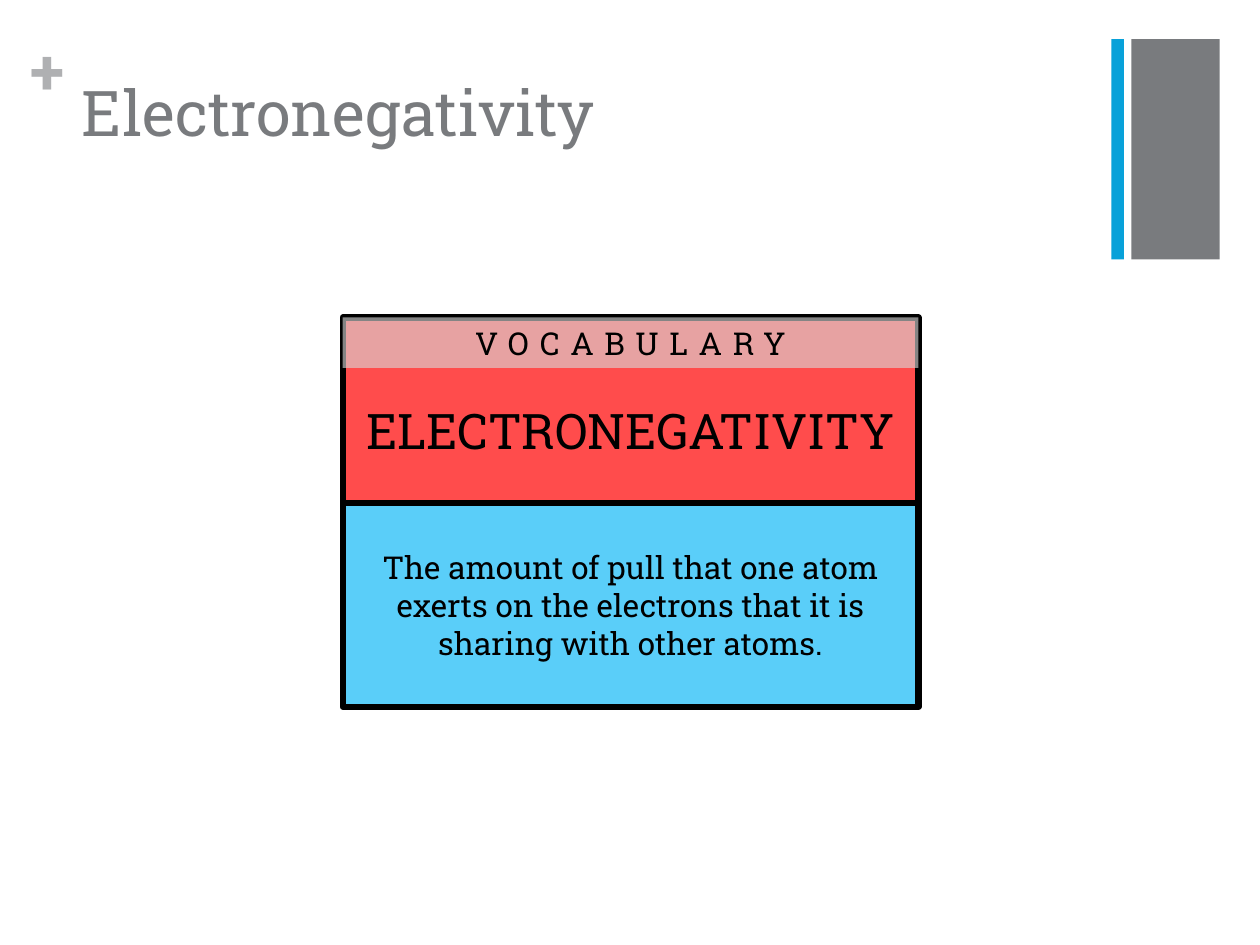
"""Build a vocabulary slide that defines electronegativity."""
from dataclasses import dataclass
from typing import Optional

from lxml.etree import SubElement
from pptx import Presentation
from pptx.dml.color import RGBColor
from pptx.enum.shapes import MSO_SHAPE
from pptx.enum.text import MSO_ANCHOR, PP_ALIGN
from pptx.oxml.ns import qn
from pptx.util import Inches, Pt

COLS, ROWS = 100, 75
FONT = "Roboto Slab"
GREY, BLACK = "797B7E", "000000"
CARD_LEFT, CARD_WIDTH = 27.2, 45.7
TOP_ROW, SPLIT_ROW = 25.2, 39.9
BAR_TOP, BAR_HEIGHT = 3.1, 17.5


@dataclass
class Box:
    left: float
    top: float
    width: float
    height: float
    fill: str
    opacity: int = 100
    outlined: bool = False
    text: str = ""
    size: int = 18
    spacing: int = 0
    inset_top: float = 0.5


BOXES = [
    Box(89.8, BAR_TOP, 7, BAR_HEIGHT, GREY),
    Box(88.2, BAR_TOP, 1, BAR_HEIGHT, "08A1D9"),
    Box(CARD_LEFT, TOP_ROW, CARD_WIDTH, SPLIT_ROW - TOP_ROW, "FF0000", 70, True,
        "ELECTRONEGATIVITY", 28, inset_top=3.7),
    Box(CARD_LEFT, TOP_ROW, CARD_WIDTH, 4, "D9D9D9", 61, text="VOCABULARY", spacing=6),
    Box(CARD_LEFT, SPLIT_ROW, CARD_WIDTH, 16.2, "5ACEF9", outlined=True,
        text="The amount of pull that one atom exerts on the electrons "
             "that it is sharing with other atoms."),
]

prs = Presentation()
prs.slide_width, prs.slide_height = Inches(10), Inches(7.5)


def col(n: float) -> int:
    return round(prs.slide_width * n / COLS)


def row(n: float) -> int:
    return round(prs.slide_height * n / ROWS)


def rgb(value: str) -> RGBColor:
    return RGBColor.from_string(value)


def style_text(tf, text: str, size: int, color: str, align=PP_ALIGN.LEFT,
               bold: bool = False, spacing: int = 0) -> None:
    tf.text = text
    p = tf.paragraphs[0]
    p.alignment = align
    r = p.runs[0]
    r.font.name, r.font.size, r.font.bold = FONT, Pt(size), bold
    r.font.color.rgb = rgb(color)
    if spacing:
        r.font._element.set("spc", str(spacing * 100))


def set_fill(sp, color: str, opacity: int) -> None:
    sp.fill.solid()
    sp.fill.fore_color.rgb = rgb(color)
    if opacity < 100:
        clr = sp._element.spPr.find(qn("a:solidFill")).find(qn("a:srgbClr"))
        SubElement(clr, qn("a:alpha")).set("val", str(opacity * 1000))


def draw_box(s, box: Box) -> None:
    sp = s.shapes.add_shape(MSO_SHAPE.RECTANGLE, col(box.left), row(box.top),
                            col(box.width), row(box.height))
    sp.shadow.inherit = False
    set_fill(sp, box.fill, box.opacity)
    if box.outlined:
        sp.line.color.rgb = rgb(BLACK)
        sp.line.width = Pt(3.5)
    else:
        sp.line.fill.background()
    if box.text:
        tf = sp.text_frame
        tf.word_wrap = True
        tf.vertical_anchor = MSO_ANCHOR.MIDDLE
        tf.margin_top = row(box.inset_top)
        style_text(tf, box.text, box.size, BLACK, PP_ALIGN.CENTER, spacing=box.spacing)


def draw_title(s, text: str) -> None:
    title = s.shapes.title
    title.left, title.top, title.width, title.height = col(5.5), row(5.3), col(82.6), row(12.2)
    title.text_frame.vertical_anchor = MSO_ANCHOR.TOP
    style_text(title.text_frame, text, 36, GREY)


def draw_plus(s) -> None:
    tf = s.shapes.add_textbox(col(2.4), row(2.5), col(2.9), row(6.1)).text_frame
    tf.margin_left = tf.margin_top = tf.margin_right = tf.margin_bottom = 0
    tf.word_wrap = True
    style_text(tf, "+", 36, "AFB0B2", bold=True)


def main() -> None:
    s = prs.slides.add_slide(prs.slide_layouts[5])
    draw_title(s, "Electronegativity")
    draw_plus(s)
    for box in BOXES:
        draw_box(s, box)
    prs.save("out.pptx")


if __name__ == "__main__":
    main()
